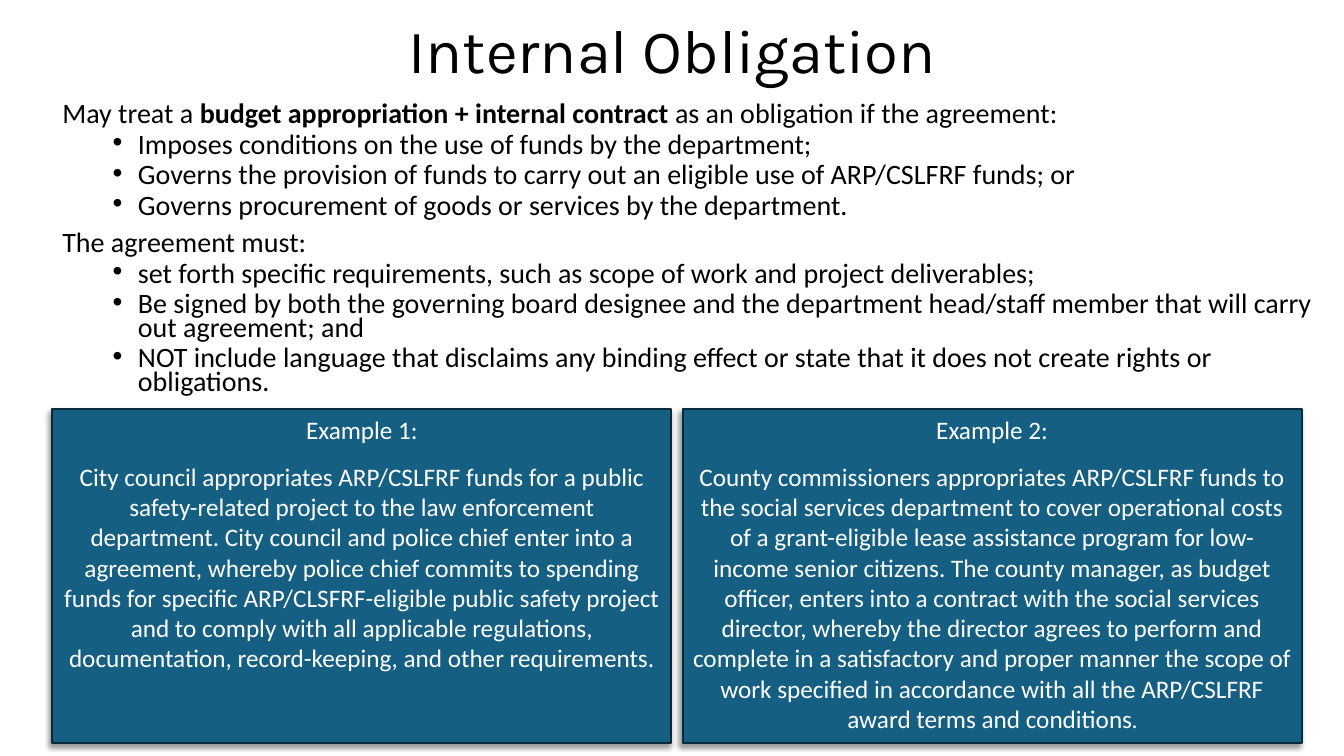
from lxml import etree
from pptx import Presentation
from pptx import util as u
from pptx.dml import color
from pptx.enum import shapes, text
from pptx.oxml import ns

SCALE = 9144

TITLE = "Internal Obligation"
SECTIONS = [
    (
        [("May treat a ", False),
         ("budget appropriation + internal contract ", True),
         ("as an obligation if the agreement:", False)],
        ["Imposes conditions on the use of funds by the department;",
         "Governs the provision of funds to carry out an eligible use of ARP/CSLFRF funds; or",
         "Governs procurement of goods or services by the department."],
    ),
    (
        [("The agreement must:", False)],
        ["set forth specific requirements, such as scope of work and project deliverables;",
         "Be signed by both the governing board designee and the department head/staff member "
         "that will carry out agreement; and",
         "NOT include language that disclaims any binding effect or state that it does not "
         "create rights or obligations."],
    ),
]
EXAMPLES = [
    ("Example 1:",
     [("City council appropriates ARP/CSLFRF funds for a public safety-related project to the "
       "law enforcement department. City council and police chief enter into a agreement, "
       "whereby police chief commits to spending funds for specific ARP/CLSFRF-eligible public "
       "safety project and to comply with all applicable regulations, documentation, "
       "record-keeping, and other requirements.", "Calibri")]),
    ("Example 2:",
     [("County commissioners appropriates ARP/CSLFRF funds to the social services department to "
       "cover operational costs of a grant-eligible lease assistance program for low-income "
       "senior citizens. The county manager, as budget officer, enters into a contract with the "
       "social services director, whereby the director agrees to perform and complete in a "
       "satisfactory and proper manner the scope of work specified in accordance with all the "
       "ARP/CSLFRF award terms and conditions", "Calibri"),
      (".", "Karla")]),
]


def px(n):
    return u.Emu(n * SCALE)


def rgb(value):
    return color.RGBColor.from_string(value)


def add_run(p, content, size=20, font="Calibri", fill="000000", bold=False):
    r = p.add_run()
    r.text = content
    r.font.size = u.Pt(size)
    r.font.name = font
    r.font.bold = bold
    r.font.color.rgb = rgb(fill)


class Deck:
    panel_fill = "156082"
    panel_line = "092A39"
    panel_text = "FFFFFF"

    def __init__(self, width, height):
        self.prs = Presentation()
        self.prs.slide_width = px(width)
        self.prs.slide_height = px(height)
        self.s = self.prs.slides.add_slide(self.prs.slide_layouts[6])

    def text_frame(self, x, y, w, h, anchor):
        tf = self.s.shapes.add_textbox(px(x), px(y), px(w), px(h)).text_frame
        tf.word_wrap = True
        tf.vertical_anchor = anchor
        return tf

    def paragraph(self, tf, before=0, spacing=1.0, align=text.PP_ALIGN.LEFT):
        p = tf.paragraphs[0]
        if p.runs:
            p = tf.add_paragraph()
        p.space_before = u.Pt(before)
        p.line_spacing = spacing
        p.alignment = align
        return p

    def title(self, content, x, y, w, h):
        tf = self.text_frame(x, y, w, h, text.MSO_ANCHOR.MIDDLE)
        p = self.paragraph(tf, spacing=0.9, align=text.PP_ALIGN.CENTER)
        add_run(p, content, size=44, font="Karla")

    def bullet(self, tf, content):
        p = self.paragraph(tf, before=5, spacing=0.7)
        p.level = 1
        pr = p._p.get_or_add_pPr()
        pr.set("marL", str(px(75)))
        pr.set("indent", str(px(-25)))
        etree.SubElement(pr, ns.qn("a:buFont"), typeface="Arial")
        etree.SubElement(pr, ns.qn("a:buChar"), char="•")
        add_run(p, content)

    def outline(self, sections, x, y, w, h):
        tf = self.text_frame(x, y, w, h, text.MSO_ANCHOR.TOP)
        for lead, bullets in sections:
            p = self.paragraph(tf, before=10, spacing=0.7)
            for content, bold in lead:
                add_run(p, content, bold=bold)
            for content in bullets:
                self.bullet(tf, content)

    def shadow(self, sp):
        effects = etree.SubElement(sp._element.spPr, ns.qn("a:effectLst"))
        outer = etree.SubElement(
            effects, ns.qn("a:outerShdw"), blurRad=str(u.Pt(4)), dist=str(u.Pt(3)),
            dir=str(135 * 60000), algn="tr", rotWithShape="0")
        tint = etree.SubElement(outer, ns.qn("a:srgbClr"), val="000000")
        etree.SubElement(tint, ns.qn("a:alpha"), val="40000")

    def panel(self, heading, body, x, y, w, h):
        sp = self.s.shapes.add_shape(
            shapes.MSO_SHAPE.RECTANGLE, px(x), px(y), px(w), px(h))
        sp.fill.solid()
        sp.fill.fore_color.rgb = rgb(self.panel_fill)
        sp.line.color.rgb = rgb(self.panel_line)
        sp.line.width = u.Pt(1.5)
        self.shadow(sp)
        tf = sp.text_frame
        tf.word_wrap = True
        tf.vertical_anchor = text.MSO_ANCHOR.TOP
        p = self.paragraph(tf, align=text.PP_ALIGN.CENTER)
        add_run(p, heading, size=18, fill=self.panel_text)
        p = self.paragraph(tf, before=12, align=text.PP_ALIGN.CENTER)
        for content, font in body:
            add_run(p, content, size=18, font=font, fill=self.panel_text)


def main():
    deck = Deck(1333, 750)
    deck.title(TITLE, 92, -19, 1150, 145)
    deck.outline(SECTIONS, 52, 99, 1276, 286)
    for i, (heading, body) in enumerate(EXAMPLES):
        deck.panel(heading, body, 52 + i * 625, 406, 614, 331)
    deck.prs.save("out.pptx")


if __name__ == "__main__":
    main()
